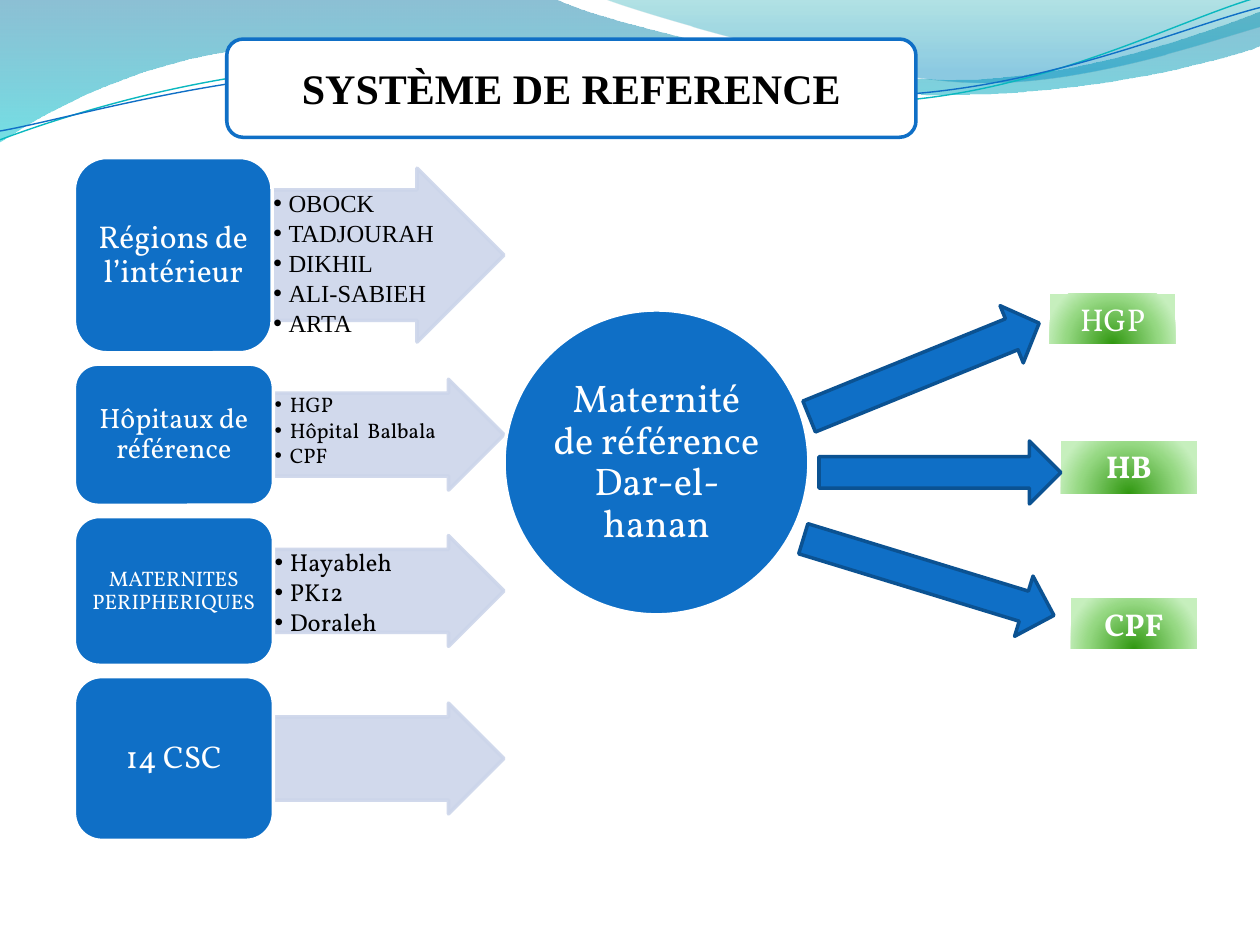
from dataclasses import dataclass

from pptx import Presentation
from pptx.dml.color import RGBColor
from pptx.enum.shapes import MSO_SHAPE
from pptx.enum.text import MSO_ANCHOR, MSO_AUTO_SIZE, PP_ALIGN
from pptx.oxml import parse_xml
from pptx.oxml.ns import nsdecls, qn
from pptx.util import Inches, Pt


@dataclass(frozen=True)
class Theme:
    serif: str = "Times New Roman"
    body: str = "Vollkorn"
    blue: str = "0F6FC6"
    navy: str = "0B5292"
    teal: str = "0AB8BF"
    pale: str = "CCD5EA"
    white: str = "FFFFFF"
    black: str = "000000"
    green: tuple = ((0, "319811", 100), (68, "95D882", 100), (100, "C6EFBD", 100))
    wave_left: tuple = ((0, "0074A1", 45), (100, "00C6CF", 55))
    wave_right: tuple = ((0, "00A1A9", 30), (80, "008BBF", 45))
    title: int = 24
    hub: int = 22
    large: int = 18
    medium: int = 16
    normal: int = 14
    small: int = 12


DOWN = '<a:lin ang="5400000" scaled="1"/>'
GLOW = '<a:path path="circle"><a:fillToRect l="50000" t="130000" r="50000" b="-30000"/></a:path>'


class Deck:
    """Draws styled elements on the current slide."""

    def __init__(self, theme, s):
        self.theme, self.s = theme, s

    def paint(self, sp, fill, line=None, width=2, alpha=100):
        sp.fill.solid()
        sp.fill.fore_color.rgb = RGBColor.from_string(fill)
        if line:
            sp.line.color.rgb = RGBColor.from_string(line)
            sp.line.width = Pt(width)
        else:
            sp.line.fill.background()
        if alpha < 100:
            for clr in sp._element.spPr.iter(qn("a:srgbClr")):
                clr.append(parse_xml(f'<a:alpha {nsdecls("a")} val="{alpha * 1000}"/>'))

    def gradient(self, sp, stops, direction):
        self.paint(sp, self.theme.white)
        gs = "".join(
            f'<a:gs pos="{pos * 1000}"><a:srgbClr val="{clr}"><a:alpha val="{alpha * 1000}"/></a:srgbClr></a:gs>'
            for pos, clr, alpha in stops)
        spPr = sp._element.spPr
        spPr.replace(spPr.find(qn("a:solidFill")), parse_xml(
            f'<a:gradFill {nsdecls("a")} rotWithShape="1"><a:gsLst>{gs}</a:gsLst>{direction}</a:gradFill>'))

    def text(self, sp, lines, size, color, font=None, bold=False, insets=(0.1, 0.05),
             anchor=MSO_ANCHOR.MIDDLE, spacing=0.9, bullets=False):
        tf = sp.text_frame
        tf.text = "\n".join(lines)
        tf.word_wrap, tf.auto_size, tf.vertical_anchor = True, MSO_AUTO_SIZE.NONE, anchor
        tf.margin_left = tf.margin_right = Inches(insets[0])
        tf.margin_top = tf.margin_bottom = Inches(insets[1])
        for p in tf.paragraphs:
            p.alignment = PP_ALIGN.LEFT if bullets else PP_ALIGN.CENTER
            p.line_spacing, p.space_before = spacing, Pt(0)
            p.font.name, p.font.size, p.font.bold = font or self.theme.body, Pt(size), bold
            p.font.color.rgb = RGBColor.from_string(color)
            if bullets:
                p.space_after = Pt(size * 0.14)
                pPr = p._p.get_or_add_pPr()
                pPr.set("marL", str(Inches(0.12)))
                pPr.set("indent", str(Inches(-0.12)))
                pPr.insert_element_before(
                    parse_xml(f'<a:buChar {nsdecls("a")} char="•"/>'), "a:tabLst", "a:defRPr")

    def shape(self, kind, x, y, w, h, fill, line=None, alpha=100):
        sp = self.s.shapes.add_shape(kind, Inches(x), Inches(y), Inches(w), Inches(h))
        sp.shadow.inherit = False
        self.paint(sp, fill, line, alpha=alpha)
        return sp

    def place(self, sp, x, y, w, h):
        sp.left, sp.top, sp.width, sp.height = Inches(x), Inches(y), Inches(w), Inches(h)
        self.s.shapes._spTree.append(sp._element)

    def curve(self, start, segments, close=False):
        points = [(Inches(seg[i]), Inches(seg[i + 1])) for seg in segments for i in range(0, len(seg), 2)]
        fb = self.s.shapes.build_freeform(Inches(start[0]), Inches(start[1]), scale=1.0)
        fb.add_line_segments(points, close=close)
        sp = fb.convert_to_shape()
        sp.shadow.inherit = False
        lines = iter(list(sp._element.spPr.iter(qn("a:lnTo"))))
        for seg in segments:
            first = next(lines)
            if len(seg) == 6:
                bezier = parse_xml(f'<a:cubicBezTo {nsdecls("a")}/>')
                first.addprevious(bezier)
                for line in (first, next(lines), next(lines)):
                    bezier.append(line[0])
                    line.getparent().remove(line)
        return sp

    def wave(self, start, segments, stops):
        self.gradient(self.curve(start, segments, close=True), stops, DOWN)

    def strand(self, start, segments, color):
        sp = self.curve(start, segments)
        sp.fill.background()
        sp.line.color.rgb = RGBColor.from_string(color)
        sp.line.width = Pt(0.8)

    def title(self, text, x, y, w, h):
        t, sp = self.theme, self.s.shapes.title
        self.shape(MSO_SHAPE.ROUNDED_RECTANGLE, x, y, w, h, t.white, t.blue)
        self.place(sp, x, y, w, h)
        self.text(sp, [text], t.title, t.black, t.serif, True, spacing=1)

    def source_card(self, label, size, x, y, w, h):
        t = self.theme
        sp = self.shape(MSO_SHAPE.ROUNDED_RECTANGLE, x, y, w, h, t.blue, t.white)
        self.text(sp, [label], size, t.white, insets=(0.05 if size == t.small else 0.07, 0.04))

    def list_arrow(self, body, lines, size, font, x, middle, right, h):
        t, y = self.theme, middle - h / 2
        sp = self.shape(MSO_SHAPE.RIGHT_ARROW, x, y, right - x, h, t.pale, t.pale, 90)
        sp.adjustments[0], sp.adjustments[1] = 0.75, 0.5
        if lines:
            self.place(body, x, y + h / 8, right - x - h * 3 / 8, h * 0.75)
            self.text(body, lines, size, t.black, font, insets=(0.01, 0.01), anchor=MSO_ANCHOR.TOP, bullets=True)
        else:
            body._element.getparent().remove(body._element)

    def hub(self, label, x, y, size):
        t = self.theme
        sp = self.shape(MSO_SHAPE.OVAL, x, y, size, size, t.blue, t.white)
        self.text(sp, [label], t.hub, t.white, insets=(0.03, 0.03))

    def target(self, label, bold, x, y, w, h):
        t = self.theme
        sp = self.shape(MSO_SHAPE.RECTANGLE, x, y, w, h, t.white)
        self.gradient(sp, t.green, GLOW)
        self.text(sp, [label], t.large, t.white, bold=bold, anchor=MSO_ANCHOR.TOP, spacing=1)

    def referral(self, x, y, w, h, angle, adjust):
        sp = self.shape(MSO_SHAPE.RIGHT_ARROW, x, y, w, h, self.theme.blue, self.theme.navy)
        sp.adjustments[0], sp.adjustments[1] = adjust
        sp.rotation = angle


def main():
    prs = Presentation()
    prs.slide_width, prs.slide_height = Inches(10), Inches(7.5)
    s = prs.slides.add_slide(prs.slide_layouts[4])
    t = Theme()
    deck = Deck(t, s)

    deck.wave((0, 0), [(4.4, -0.01), (4.76, 0.17, 6.64, 0.63, 7.58, 0.63), (8.53, 0.63, 9.58, 0.26, 10, 0.09),
                       (10.01, 0.36), (9.83, 0.44, 8.7, 0.76, 7.46, 0.75), (6.22, 0.75, 3.82, 0.28, 2.57, 0.34),
                       (1.29, 0.36, 0.46, 0.83, -0.01, 1.13)], t.wave_left)
    deck.wave((4.79, -0.01), [(5.09, 0.11, 6.82, 0.62, 7.69, 0.65), (8.56, 0.69, 9.61, 0.32, 10, 0.21),
                              (10, 0)], t.wave_right)
    deck.strand((0, 1.11), [(0.48, 0.93, 1.58, 0.57, 2.77, 0.52), (3.95, 0.47, 5.93, 0.89, 7.13, 0.8),
                            (8.33, 0.71, 9.38, 0.15, 9.98, -0.02)], t.teal)
    deck.strand((0, 1.04), [(0.47, 0.96, 1.64, 0.61, 2.83, 0.56), (4.03, 0.51, 5.97, 0.84, 7.17, 0.75),
                            (8.36, 0.67, 9.41, 0.21, 10, 0.06)], t.blue)

    sources = [
        ("Régions de l’intérieur", t.large, 1.57, 1.55, 1.38, t.normal, t.serif,
         ["OBOCK", "TADJOURAH", "DIKHIL", "ALI-SABIEH", "ARTA"]),
        ("Hôpitaux de référence", t.medium, 1.58, 1.12, 0.88, t.small, t.body,
         ["HGP", "Hôpital  Balbala", "CPF"]),
        ("MATERNITES PERIPHERIQUES", t.small, 1.58, 1.18, 0.88, t.normal, t.body,
         ["Hayableh", "PK12", "Doraleh"]),
        ("14 CSC", t.large, 1.58, 1.3, 0.88, t.normal, t.body, []),
    ]
    left, top, gap, hub_left = 0.59, 1.25, 0.09, 4
    bodies = list(s.placeholders)[1:]
    for body, (label, size, w, h, arrow_h, list_size, font, lines) in zip(bodies, sources):
        deck.list_arrow(body, lines, list_size, font, left + w, top + h / 2, hub_left, arrow_h)
        deck.source_card(label, size, left, top, w, h)
        top += h + gap

    deck.hub("Maternité de référence Dar-el-hanan", hub_left, 2.46, 2.42)
    for label, bold, *box in [("HGP", False, 8.33, 2.33, 1, 0.4), ("HB", True, 8.42, 3.5, 1.08, 0.42),
                              ("CPF", True, 8.5, 4.75, 1, 0.4)]:
        deck.target(label, bold, *box)
    for arrow in [(6.35, 2.69, 1.97, 0.49, 337.9, (0.54, 0.48)), (6.5, 3.5, 1.92, 0.5, 0, (0.5, 0.5)),
                  (6.33, 4.33, 2.08, 0.5, 17, (0.5, 0.5))]:
        deck.referral(*arrow)
    deck.title("SYSTÈME DE REFERENCE", 1.8, 0.31, 5.47, 0.78)
    prs.save("out.pptx")


if __name__ == "__main__":
    main()
